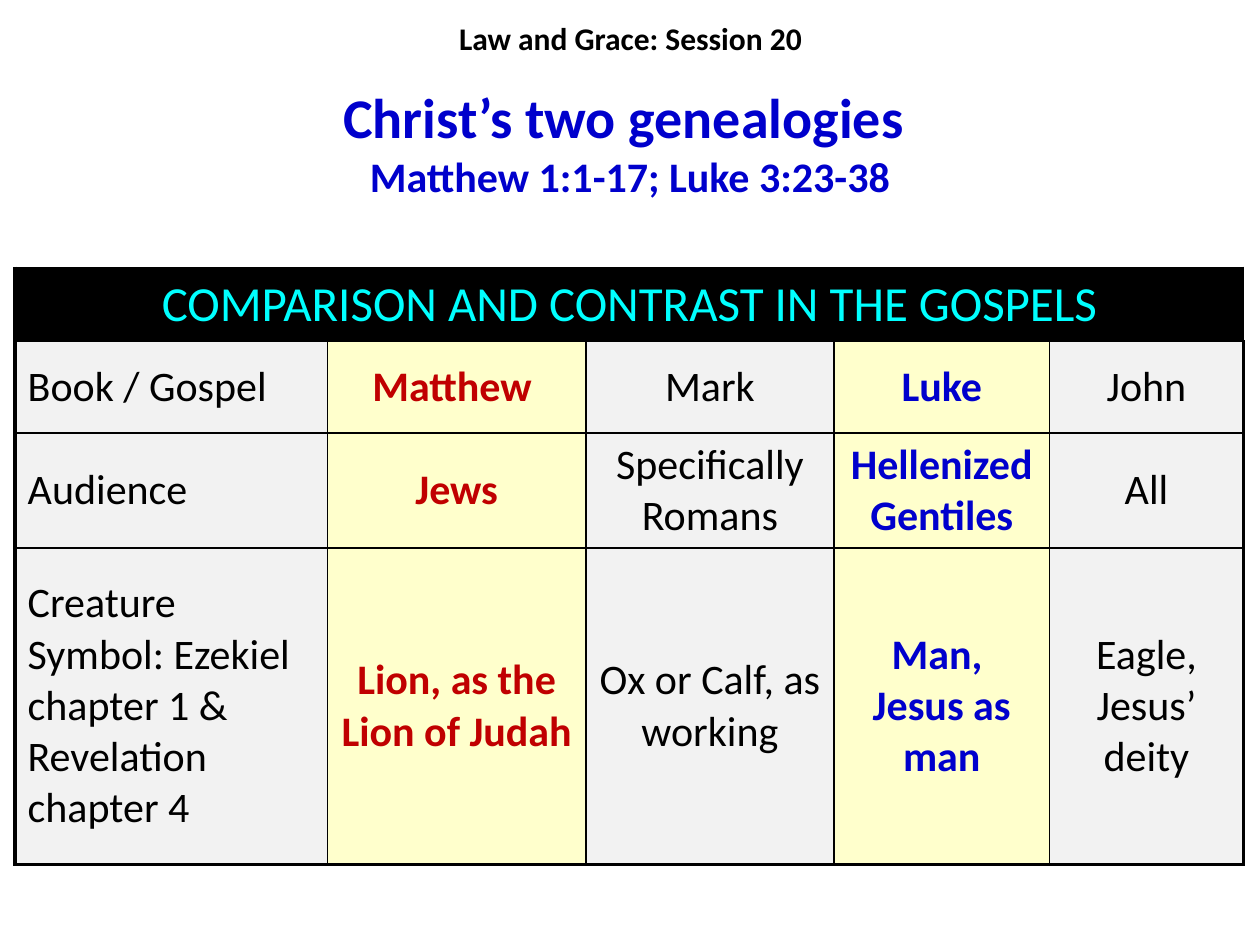
from dataclasses import dataclass

from lxml.etree import SubElement
from pptx import Presentation
from pptx.dml.color import RGBColor
from pptx.enum.text import MSO_ANCHOR, PP_ALIGN
from pptx.oxml.ns import qn
from pptx.util import Inches, Pt

BLACK = RGBColor(0x00, 0x00, 0x00)
CYAN = RGBColor(0x00, 0xFF, 0xFF)
RED = RGBColor(0xC0, 0x00, 0x00)
BLUE = RGBColor(0x00, 0x00, 0xCC)
GREY = RGBColor(0xF2, 0xF2, 0xF2)
CREAM = RGBColor(0xFF, 0xFF, 0xCC)
FONT = "Calibri"
OUTER, INNER = Pt(2.25), Pt(1)
ROW_HEIGHTS = (0.57, 0.73, 0.91, 2.51)


@dataclass(frozen=True)
class GospelColumn:
    width: float
    entries: tuple[str, str, str]
    color: RGBColor = BLACK
    fill: RGBColor = GREY
    bold: bool = False
    align: PP_ALIGN = PP_ALIGN.CENTER


COLUMNS = (
    GospelColumn(2.48, ("Book / Gospel", "Audience",
                        "Creature Symbol: Ezekiel chapter 1 & Revelation chapter 4"),
                 align=PP_ALIGN.LEFT),
    GospelColumn(2.05, ("Matthew ", "Jews", "Lion, as the Lion of Judah"), RED, CREAM, True),
    GospelColumn(1.97, ("Mark", "Specifically Romans", "Ox or Calf, as working")),
    GospelColumn(1.71, ("Luke", "Hellenized Gentiles", "Man, \vJesus as man"), BLUE, CREAM, True),
    GospelColumn(1.54, ("John", "All", "Eagle, Jesus’ deity")),
)


def style_paragraph(paragraph, size: float, color: RGBColor, bold: bool,
                    align: PP_ALIGN = PP_ALIGN.CENTER) -> None:
    paragraph.alignment = align
    font = paragraph.font
    font.name, font.size, font.bold = FONT, Pt(size), bold
    font.color.rgb = color


def add_borders(cell, row: int, column: int) -> None:
    outer_sides = {
        "a:lnL": column == 0,
        "a:lnR": column == len(COLUMNS) - 1,
        "a:lnT": row == 0,
        "a:lnB": row == len(ROW_HEIGHTS) - 1,
    }
    properties = cell._tc.get_or_add_tcPr()
    for side, is_outer in outer_sides.items():
        line = SubElement(properties, qn(side), w=str(OUTER if is_outer else INNER))
        SubElement(SubElement(line, qn("a:solidFill")), qn("a:srgbClr"), val=str(BLACK))


def fill_cell(cell, text: str, size: float, column: GospelColumn) -> None:
    cell.fill.solid()
    cell.fill.fore_color.rgb = column.fill
    cell.vertical_anchor = MSO_ANCHOR.MIDDLE
    cell.text = text
    style_paragraph(cell.text_frame.paragraphs[0], size, column.color, column.bold, column.align)


def add_gospel_table(slide) -> None:
    table = slide.shapes.add_table(
        len(ROW_HEIGHTS), len(COLUMNS), Inches(0.12), Inches(2.13),
        Inches(sum(column.width for column in COLUMNS)), Inches(sum(ROW_HEIGHTS))).table
    table.first_row = table.horz_banding = False
    for row, height in enumerate(ROW_HEIGHTS):
        table.rows[row].height = Inches(height)
        for index, column in enumerate(COLUMNS):
            table.columns[index].width = Inches(column.width)
            cell = table.cell(row, index)
            add_borders(cell, row, index)
            if row:
                fill_cell(cell, column.entries[row - 1], 24, column)
    heading = table.cell(0, 0)
    heading.merge(table.cell(0, len(COLUMNS) - 1))
    fill_cell(heading, "COMPARISON AND CONTRAST IN THE GOSPELS", 28,
              GospelColumn(0, ("", "", ""), CYAN, BLACK))
    heading.vertical_anchor = MSO_ANCHOR.TOP


def add_session(slide) -> None:
    session = slide.shapes.add_textbox(Inches(1.17), Inches(0.1), Inches(7.67), Inches(0.4))
    session.text_frame.word_wrap = True
    session.text_frame.text = "Law and Grace: Session 20"
    style_paragraph(session.text_frame.paragraphs[0], 18, BLACK, True)


def set_title(slide) -> None:
    title = slide.shapes.title
    title.left, title.top = Inches(0.75), Inches(0.75)
    title.width, title.height = Inches(8.5), Inches(0.75)
    title.text_frame.vertical_anchor = MSO_ANCHOR.MIDDLE
    paragraph = title.text_frame.paragraphs[0]
    style_paragraph(paragraph, 32, BLUE, True)
    paragraph.add_run().text = "Christ’s two genealogies "
    paragraph.add_line_break()
    passages = paragraph.add_run()
    passages.text = "Matthew 1:1-17; Luke 3:23-38"
    passages.font.size = Pt(24)


def main() -> None:
    presentation = Presentation()
    presentation.slide_width, presentation.slide_height = Inches(10), Inches(7.5)
    slide = presentation.slides.add_slide(presentation.slide_layouts[5])
    add_gospel_table(slide)
    add_session(slide)
    set_title(slide)
    presentation.save("out.pptx")


if __name__ == "__main__":
    main()
